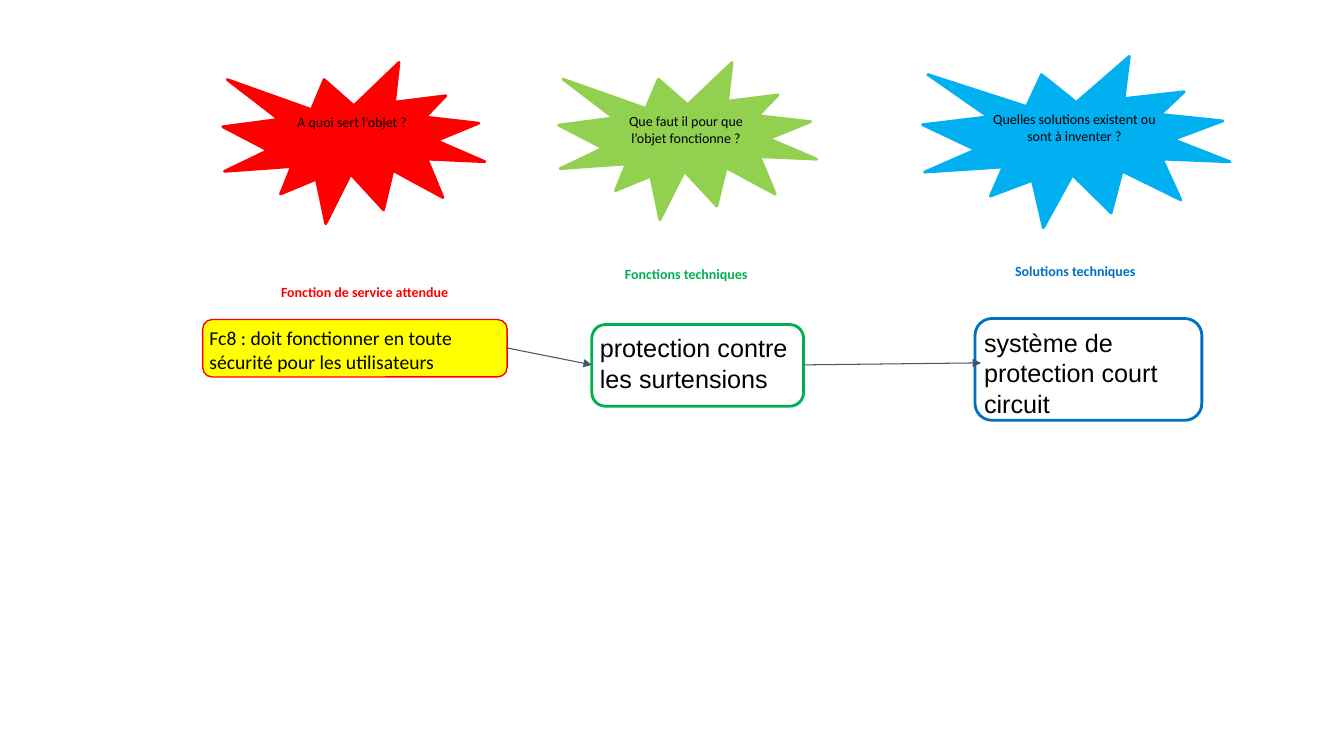
from dataclasses import dataclass
from typing import Optional

from lxml import etree
from pptx import Presentation
from pptx.dml.color import RGBColor
from pptx.enum.shapes import MSO_CONNECTOR, MSO_SHAPE
from pptx.enum.text import MSO_ANCHOR, PP_ALIGN
from pptx.oxml.ns import qn
from pptx.util import Inches, Pt

BURST, BOX = MSO_SHAPE.EXPLOSION1, MSO_SHAPE.ROUNDED_RECTANGLE
STRAIGHT = MSO_CONNECTOR.STRAIGHT
LEFT, CENTER = PP_ALIGN.LEFT, PP_ALIGN.CENTER
TOP = MSO_ANCHOR.TOP
RED, GREEN, BLUE = "FF0000", "00B050", "0070C0"
LIME, SKY, YELLOW = "92D050", "00B0F0", "FFFF00"
BLACK, SLATE = "000000", "44546A"
INSET = Inches(0.04)
TITLE_SIZE = (2.21, 0.34)


@dataclass
class Label:
    text: str
    at: tuple[float, float, float, float]
    size: float = 10
    font: str = "Calibri"
    color: str = BLACK
    bold: bool = False
    align: PP_ALIGN = CENTER


@dataclass
class Panel:
    label: Label
    kind: MSO_SHAPE
    line: str
    width: float = 2
    fill: Optional[str] = None


@dataclass
class Arrow:
    start: tuple[float, float]
    end: tuple[float, float]


TITLES = [
    Label("Fonction de service attendue", (2.51, 2.77, *TITLE_SIZE), color=RED, bold=True),
    Label("Fonctions techniques", (5.7, 2.59, *TITLE_SIZE), color=GREEN, bold=True),
    Label("Solutions techniques", (9.56, 2.56, *TITLE_SIZE), color=BLUE, bold=True),
]
PANELS = [
    Panel(Label("Fc8 : doit fonctionner en toute sécurité pour les utilisateurs",
                (2.01, 3.17, 3.02, 0.57), size=14, align=LEFT), BOX, RED, 1, YELLOW),
    Panel(Label("protection contre les surtensions",
                (5.87, 3.22, 2.1, 0.81), size=18, font="Arial", align=LEFT), BOX, GREEN),
    Panel(Label("système de protection court circuit",
                (9.67, 3.16, 2.25, 1.01), size=18, font="Arial", align=LEFT), BOX, BLUE),
    Panel(Label("A quoi sert l’objet ?", (2.21, 0.62, 2.6, 1.6)), BURST, RED, fill=RED),
    Panel(Label("Que faut il pour que l’objet fonctionne ?", (5.54, 0.62, 2.56, 1.56)),
          BURST, LIME, fill=LIME),
    Panel(Label("Quelles solutions existent ou sont à inventer ?", (9.15, 0.56, 3.05, 1.7)),
          BURST, SKY, fill=SKY),
]
ARROWS = [Arrow((5.02, 3.45), (5.87, 3.62)), Arrow((7.98, 3.62), (9.73, 3.6))]


def rgb(value: str) -> RGBColor:
    return RGBColor.from_string(value)


def write(sp, label: Label) -> None:
    tf = sp.text_frame
    frame = dict(word_wrap=True, vertical_anchor=TOP, margin_left=INSET,
                 margin_right=INSET, margin_top=INSET, margin_bottom=INSET)
    for name, value in frame.items():
        setattr(tf, name, value)
    p = tf.paragraphs[0]
    p.alignment = label.align
    r = p.add_run()
    r.text = label.text
    for name, value in dict(name=label.font, size=Pt(label.size), bold=label.bold).items():
        setattr(r.font, name, value)
    r.font.color.rgb = rgb(label.color)


def add_title(s, label: Label) -> None:
    write(s.shapes.add_textbox(*map(Inches, label.at)), label)


def add_panel(s, panel: Panel) -> None:
    sp = s.shapes.add_shape(panel.kind, *map(Inches, panel.label.at))
    sp.shadow.inherit = False
    if panel.fill:
        sp.fill.solid()
        sp.fill.fore_color.rgb = rgb(panel.fill)
    else:
        sp.fill.background()
    sp.line.color.rgb = rgb(panel.line)
    sp.line.width = Pt(panel.width)
    write(sp, panel.label)


def add_arrow(s, arrow: Arrow) -> None:
    cx = s.shapes.add_connector(STRAIGHT, *map(Inches, arrow.start + arrow.end))
    cx.line.color.rgb = rgb(SLATE)
    cx.line.width = Pt(0.75)
    etree.SubElement(cx.line._get_or_add_ln(), qn("a:tailEnd"), type="triangle")
    etree.SubElement(cx._element.spPr, qn("a:effectLst"))


def main() -> None:
    prs = Presentation()
    prs.slide_width, prs.slide_height = Inches(13.33), Inches(7.5)
    s = prs.slides.add_slide(prs.slide_layouts[6])
    for title in TITLES:
        add_title(s, title)
    for panel in PANELS:
        add_panel(s, panel)
    for arrow in ARROWS:
        add_arrow(s, arrow)
    prs.save("out.pptx")


if __name__ == "__main__":
    main()
